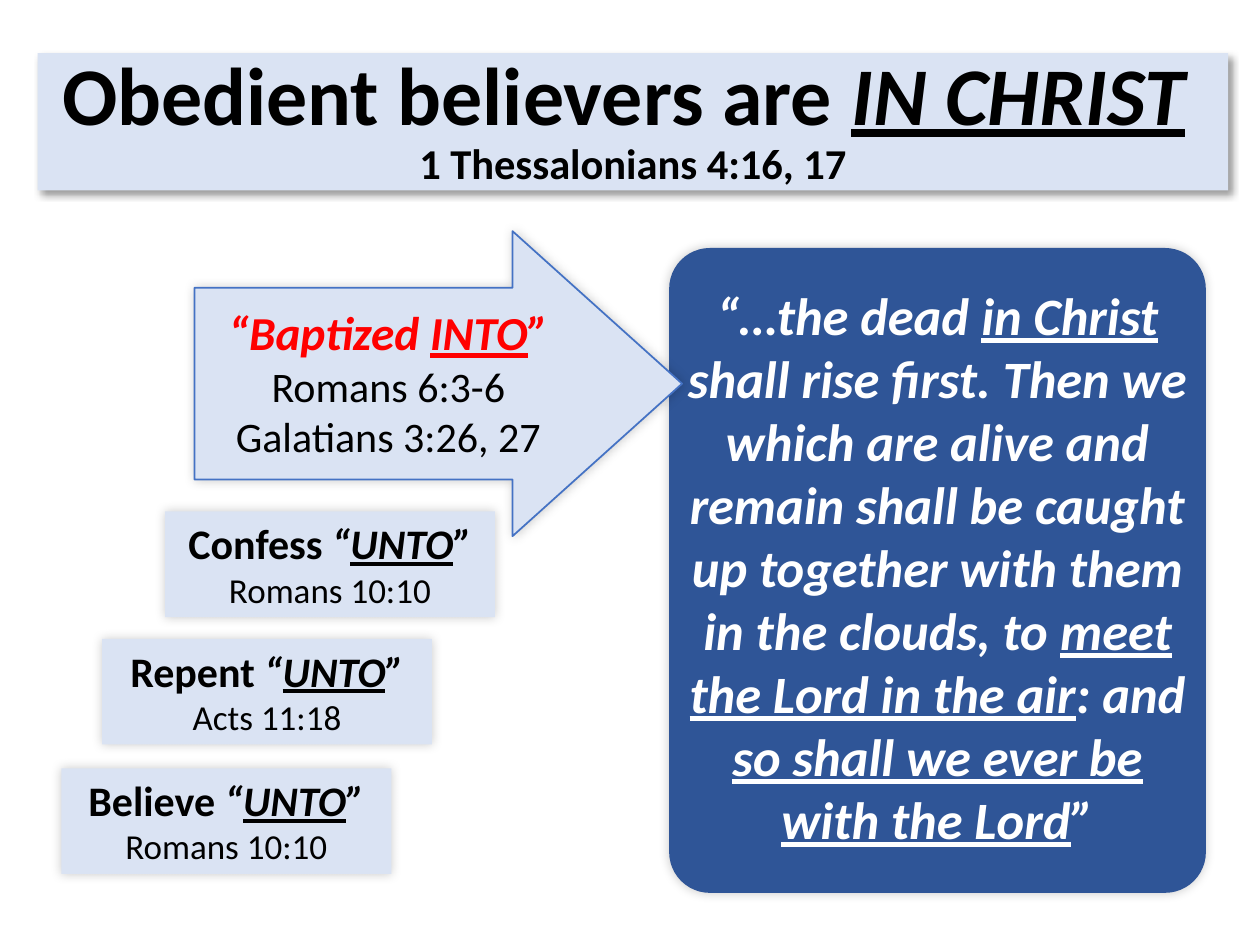
from lxml import etree
from pptx import Presentation
from pptx.dml.color import RGBColor
from pptx.enum import shapes, text
from pptx.oxml.ns import qn
from pptx.util import Cm, Pt

PALE = RGBColor(0xDA, 0xE3, 0xF3)
NAVY = RGBColor(0x2F, 0x55, 0x97)
BLUE = RGBColor(0x44, 0x72, 0xC4)
BLACK = RGBColor(0, 0, 0)
WHITE = RGBColor(0xFF, 0xFF, 0xFF)
RED = RGBColor(0xFF, 0, 0)
FONT = "Calibri"
SHAPE = shapes.MSO_SHAPE

STEP_W, STEP_H = 6.65, 2.13
STEPS = [
    (1.24, 15.49, "Believe", "Romans 10:10"),
    (2.06, 12.88, "Repent", "Acts 11:18"),
    (3.33, 10.31, "Confess", "Romans 10:10"),
]
VERSE = [
    ("“…the dead ", "bi"),
    ("in Christ", "biu"),
    (" shall rise first. Then we which are alive and remain shall be "
     "caught up together with them in the clouds, to ", "bi"),
    ("meet the Lord in the air", "biu"),
    (": and ", "bi"),
    ("so shall we ever be with the Lord", "biu"),
    ("”", "bi"),
]


def add_shadow(sp, alpha=20, blur=6, dist=0, angle=315):
    """Blur and distance are in points, alpha in percent."""
    sp.shadow.inherit = False
    effects = sp._element.spPr.find(qn("a:effectLst"))
    shadow = etree.SubElement(
        effects, qn("a:outerShdw"), blurRad=str(Pt(blur)), dist=str(Pt(dist)),
        dir=str(angle * 60000), algn="ctr", rotWithShape="0")
    color = etree.SubElement(shadow, qn("a:srgbClr"), val=str(BLACK))
    etree.SubElement(color, qn("a:alpha"), val=str(alpha * 1000))


def add_box(parent, kind, x, y, w, h, fill):
    sp = parent.add_shape(kind, Cm(x), Cm(y), Cm(w), Cm(h))
    sp.shadow.inherit = False
    sp.fill.solid()
    sp.fill.fore_color.rgb = fill
    sp.line.fill.background()
    sp.text_frame.word_wrap = True
    sp.text_frame.vertical_anchor = text.MSO_ANCHOR.TOP
    return sp


def add_runs(p, runs, size, color=BLACK):
    """Each run is (words, style), the style made of the letters b, i and u."""
    p.alignment = text.PP_ALIGN.CENTER
    for words, style in runs:
        r = p.add_run()
        r.text = words
        r.font.name, r.font.size = FONT, Pt(size)
        r.font.color.rgb = color
        r.font.bold = "b" in style
        r.font.italic = "i" in style
        r.font.underline = "u" in style


def add_title(s, x, y, w, h):
    sp = add_box(s.shapes, SHAPE.RECTANGLE, x, y, w, h, PALE)
    add_shadow(sp, alpha=40, blur=4, dist=3, angle=45)
    sp.text_frame.vertical_anchor = text.MSO_ANCHOR.MIDDLE
    p = sp.text_frame.paragraphs[0]
    p.line_spacing = 0.9
    add_runs(p, [("Obedient believers are ", "b"), ("IN CHRIST", "biu"),
                 (" ", "bi")], 46.8)
    p.add_line_break()
    add_runs(p, [("1 Thessalonians 4:16, 17", "b")], 24.3)


def add_verse_card(s, x, y, w, h):
    card = add_box(s.shapes, SHAPE.ROUNDED_RECTANGLE, x, y, w, h, NAVY)
    card.adjustments[0] = 0.076
    add_shadow(card)
    margin = 0.58
    tb = s.shapes.add_textbox(Cm(x), Cm(y + margin), Cm(w), Cm(h - 2 * margin))
    tb.text_frame.word_wrap = True
    add_runs(tb.text_frame.paragraphs[0], VERSE, 30, WHITE)


def add_step(s, x, y, w, h, step, reference):
    sp = add_box(s.shapes, SHAPE.RECTANGLE, x, y, w, h, PALE)
    add_shadow(sp)
    tf = sp.text_frame
    add_runs(tf.paragraphs[0], [(step + " ", "b"), ("“", "bi"),
                                ("UNTO", "biu"), ("”", "bi")], 24)
    add_runs(tf.add_paragraph(), [(reference, "")], 20)


def add_baptism_arrow(s, x, y, w, h):
    """An up arrow turned to point right, filling the box, with its label."""
    group = s.shapes.add_group_shape().shapes
    arrow = add_box(group, SHAPE.UP_ARROW,
                    x + (w - h) / 2, y + (h - w) / 2, h, w, PALE)
    arrow.rotation = 90
    arrow.adjustments[0] = 0.628
    arrow.adjustments[1] = 0.556
    arrow.line.color.rgb = BLUE
    arrow.line.width = Pt(1)
    add_shadow(arrow)

    label = add_box(group, SHAPE.RECTANGLE, x + 0.25, y + 1.33, 7.32, 3.45, PALE)
    tf = label.text_frame
    add_runs(tf.paragraphs[0], [("“Baptized ", "bi"), ("INTO", "biu"),
                                ("”", "bi")], 27, RED)
    for reference in ("Romans 6:3-6", "Galatians 3:26, 27"):
        add_runs(tf.add_paragraph(), [(reference, "")], 24)


def main():
    prs = Presentation()
    prs.slide_width, prs.slide_height = Cm(25.4), Cm(19.05)
    s = prs.slides.add_slide(prs.slide_layouts[6])
    add_title(s, 0.76, 1.07, 24, 2.77)
    add_verse_card(s, 13.49, 5, 10.82, 13)
    for x, y, step, reference in STEPS:
        add_step(s, x, y, STEP_W, STEP_H, step, reference)
    add_baptism_arrow(s, 3.92, 4.66, 9.83, 6.15)
    prs.save("out.pptx")


if __name__ == "__main__":
    main()
